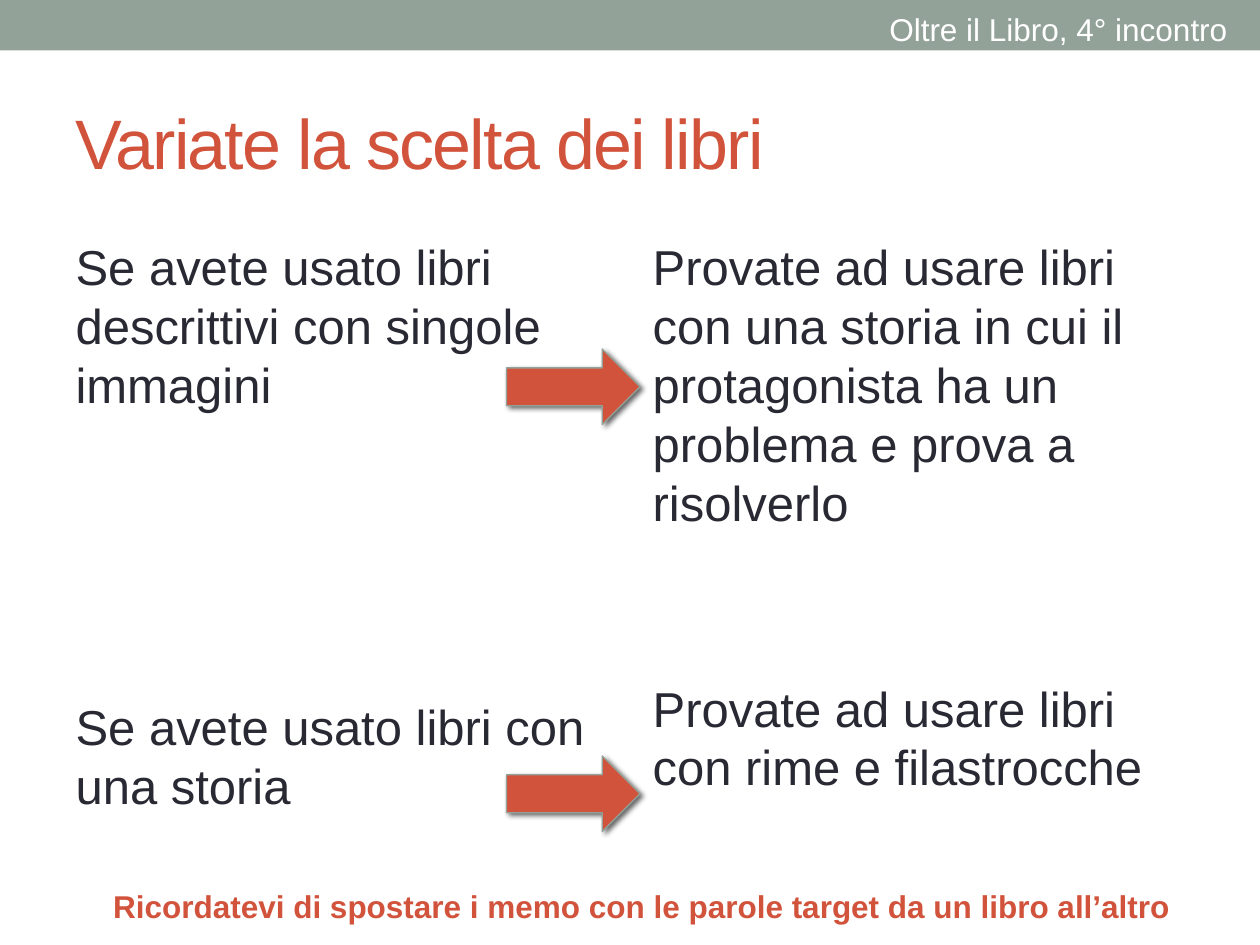
from dataclasses import dataclass

from lxml import etree
from pptx import Presentation
from pptx import util as u
from pptx.dml.color import RGBColor
from pptx.enum import shapes, text
from pptx.oxml.ns import qn


@dataclass(frozen=True)
class Theme:
    font: str = "Arial"
    accent: RGBColor = RGBColor(0xD2, 0x53, 0x3C)
    band: RGBColor = RGBColor(0x93, 0xA2, 0x99)
    ink: RGBColor = RGBColor(0x29, 0x29, 0x34)
    white: RGBColor = RGBColor(0xFF, 0xFF, 0xFF)
    title_size: int = 40
    body_size: int = 28
    small_size: int = 18


THEME = Theme()


def place(s, box):
    s.left, s.top, s.width, s.height = map(u.Inches, box)


def format_runs(p, size, color, bold=False):
    for r in p.runs:
        r.font.name = THEME.font
        r.font.size = u.Pt(size)
        r.font.bold = bold
        r.font.color.rgb = color


def add_shape(sl, kind, box, fill):
    s = sl.shapes.add_shape(kind, *map(u.Inches, box))
    s.shadow.inherit = False
    s.fill.solid()
    s.fill.fore_color.rgb = fill
    s.line.fill.background()
    return s


def add_label(sl, box, words, color, bold=False):
    tf = sl.shapes.add_textbox(*map(u.Inches, box)).text_frame
    tf.word_wrap = True
    tf.text = words
    format_runs(tf.paragraphs[0], THEME.small_size, color, bold)


def add_header(sl, box):
    """Coloured band with the session name at its right end."""
    left, top, width, height = box
    add_shape(sl, shapes.MSO_SHAPE.RECTANGLE, box, THEME.band)
    add_label(sl, (left + width - 3.04, top + 0.03, 2.91, height),
              "Oltre il Libro, 4° incontro", THEME.white)


def fill_title(s, box, words):
    place(s, box)
    tf = s.text_frame
    tf.text = words
    tf.auto_size = text.MSO_AUTO_SIZE.NONE
    tf.vertical_anchor = text.MSO_ANCHOR.MIDDLE
    p = tf.paragraphs[0]
    p.alignment = text.PP_ALIGN.LEFT
    format_runs(p, THEME.title_size, THEME.accent)
    for r in p.runs:
        r._r.get_or_add_rPr().set("spc", "-100")


def fill_column(s, box, paragraphs, gap):
    """Unbulleted paragraphs, with a gap in points between them."""
    place(s, box)
    tf = s.text_frame
    tf.text = "\n".join(paragraphs)
    tf.auto_size = text.MSO_AUTO_SIZE.NONE
    tf.vertical_anchor = text.MSO_ANCHOR.TOP
    for i, p in enumerate(tf.paragraphs):
        p.space_before = u.Pt(gap if i else 0)
        format_runs(p, THEME.body_size, THEME.ink)
        pPr = p._p.get_or_add_pPr()
        pPr.set("marL", "0")
        pPr.set("indent", "0")
        etree.SubElement(pPr, qn("a:buNone"))


def add_arrow(sl, box):
    """Block arrow with a soft shadow to the lower right."""
    s = add_shape(sl, shapes.MSO_SHAPE.RIGHT_ARROW, box, THEME.accent)
    s.line.color.rgb = THEME.band
    s.line.width = u.Pt(0.75)
    effects = s._element.spPr.find(qn("a:effectLst"))
    shadow = etree.SubElement(effects, qn("a:outerShdw"), blurRad=str(u.Pt(3)),
                              dist=str(u.Pt(2)), dir=str(45 * 60000),
                              rotWithShape="0")
    color = etree.SubElement(shadow, qn("a:srgbClr"), val="000000")
    etree.SubElement(color, qn("a:alpha"), val="60000")


def main():
    prs = Presentation()
    prs.slide_width, prs.slide_height = u.Inches(10), u.Inches(7.5)
    sl = prs.slides.add_slide(prs.slide_layouts[3])
    title, left, right = sl.placeholders

    # Header and title
    add_header(sl, (0, 0, 10, 0.4))
    fill_title(title, (0.5, 0.58, 9, 1.08), "Variate la scelta dei libri")

    # What was read, and what to try next
    fill_column(left, (0.5, 1.83, 4.42, 5.16),
                ["Se avete usato libri descrittivi con singole immagini",
                 "Se avete usato libri con una storia"], 162)
    fill_column(right, (5.08, 1.83, 4.42, 5.16),
                ["Provate ad usare libri con una storia in cui il protagonista "
                 "ha un problema e prova a risolverlo",
                 "Provate ad usare libri con rime e filastrocche"], 84)
    for top in (2.77, 6):
        add_arrow(sl, (4.02, top, 1.06, 0.6))

    # Closing reminder
    add_label(sl, (0.8, 6.99, 8.7, 0.4),
              "Ricordatevi di spostare i memo con le parole target "
              "da un libro all’altro", THEME.accent, bold=True)

    prs.save("out.pptx")


if __name__ == "__main__":
    main()
